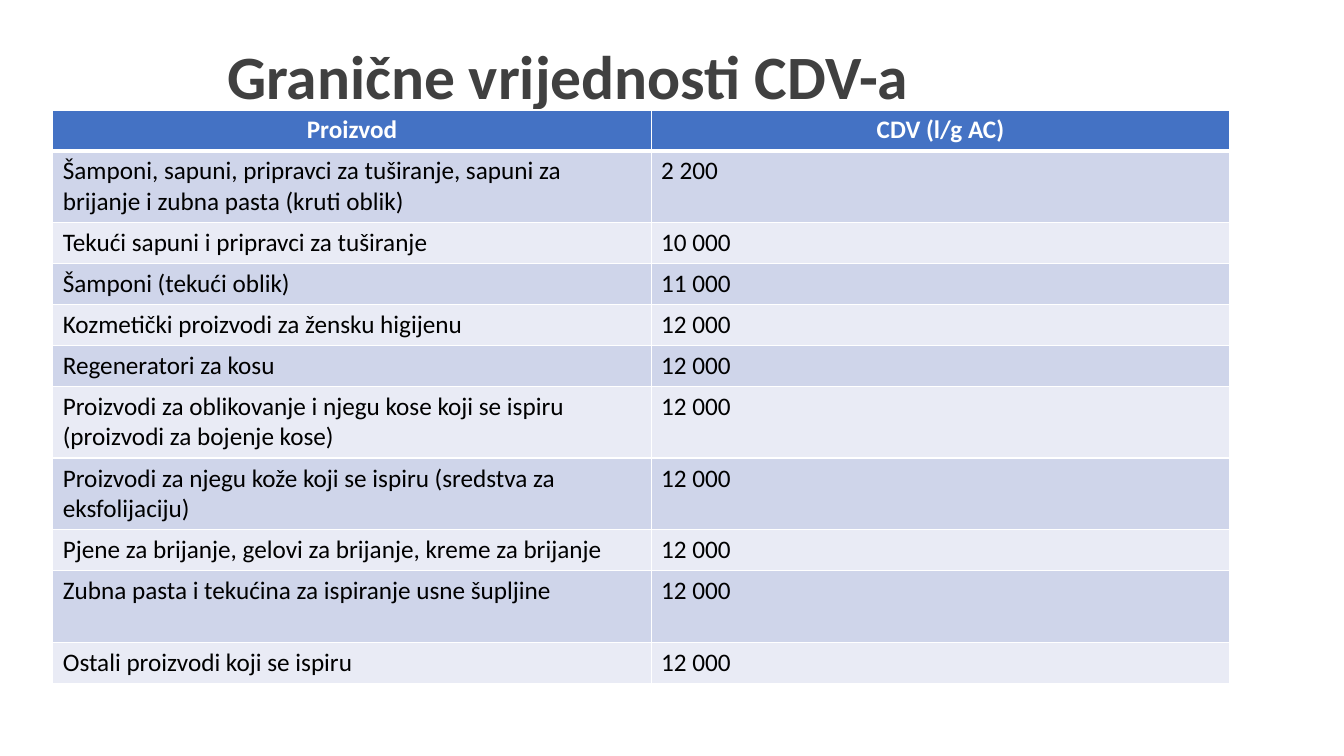
from lxml import etree
from pptx import Presentation
from pptx.dml.color import RGBColor
from pptx.enum.text import MSO_ANCHOR, PP_ALIGN
from pptx.oxml.ns import qn
from pptx.util import Cm, Pt

LEFT, CENTER = PP_ALIGN.LEFT, PP_ALIGN.CENTER
MIDDLE = MSO_ANCHOR.MIDDLE

HEADER = ("Proizvod", "CDV (l/g AC)")
LIMITS = [
    ("Šamponi, sapuni, pripravci za tuširanje, sapuni za brijanje i zubna pasta (kruti oblik)", "2 200"),
    ("Tekući sapuni i pripravci za tuširanje", "10 000"),
    ("Šamponi (tekući oblik)", "11 000"),
    ("Kozmetički proizvodi za žensku higijenu", "12 000"),
    ("Regeneratori za kosu", "12 000"),
    ("Proizvodi za oblikovanje i njegu kose koji se ispiru (proizvodi za bojenje kose)", "12 000"),
    ("Proizvodi za njegu kože koji se ispiru (sredstva za eksfolijaciju)", "12 000"),
    ("Pjene za brijanje, gelovi za brijanje, kreme za brijanje", "12 000"),
    ("Zubna pasta i tekućina za ispiranje usne šupljine", "12 000"),
    ("Ostali proizvodi koji se ispiru", "12 000"),
]
TALL_ROWS = {1, 6, 7, 9}


def rgb(value):
    """Turn a hex string into a colour."""
    return RGBColor.from_string(value)


def write(tf, text, font="Calibri", size=18, color="000000", bold=False, align=LEFT, spacing=1.0):
    """Put formatted text into the first paragraph of a text frame."""
    p = tf.paragraphs[0]
    p.alignment = align
    p.line_spacing = spacing
    r = p.add_run()
    r.text = text
    r.font.name = font
    r.font.size = Pt(size)
    r.font.bold = bold
    r.font.color.rgb = rgb(color)


class Deck:
    """Hold the style and the current slide."""

    heading, header_fill, line = "404040", "4472C4", "FFFFFF"
    bands = ("E9EBF5", "CFD5EA")

    def __init__(self, prs):
        """Start a blank slide."""
        self.s = prs.slides.add_slide(prs.slide_layouts[6])

    def title(self, text, x, y, w, h):
        """Add the slide heading."""
        tf = self.s.shapes.add_textbox(Cm(x), Cm(y), Cm(w), Cm(h)).text_frame
        tf.word_wrap = True
        tf.vertical_anchor = MIDDLE
        write(tf, text, size=44, color=self.heading, bold=True, align=CENTER, spacing=0.9)

    def border(self, cell, bottom):
        """Draw the four edges of a cell."""
        tc_pr = cell._tc.get_or_add_tcPr()
        for side, width in (("L", 1), ("R", 1), ("T", 1), ("B", bottom)):
            ln = etree.SubElement(tc_pr, qn(f"a:ln{side}"), w=str(Pt(width)))
            fill = etree.SubElement(ln, qn("a:solidFill"))
            etree.SubElement(fill, qn("a:srgbClr"), val=self.line)

    def table(self, rows, x, y, widths, heights):
        """Add a banded table with a header row."""
        table = self.s.shapes.add_table(
            len(rows), len(widths), Cm(x), Cm(y), Cm(sum(widths)), Cm(sum(heights))).table
        for column, width in zip(table.columns, widths):
            column.width = Cm(width)
        for i, (values, height) in enumerate(zip(rows, heights)):
            table.rows[i].height = Cm(height)
            head = i == 0
            for j, text in enumerate(values):
                cell = table.cell(i, j)
                self.border(cell, 3 if head else 1)
                cell.fill.solid()
                cell.fill.fore_color.rgb = rgb(self.header_fill if head else self.bands[i % 2])
                write(cell.text_frame, text, bold=head, color="FFFFFF" if head else "000000",
                      align=CENTER if head else LEFT)


def main():
    """Build and save the slide."""
    prs = Presentation()
    prs.slide_width, prs.slide_height = Cm(33.87), Cm(19.05)
    deck = Deck(prs)
    deck.title("Granične vrijednosti CDV-a", 1.07, 0.61, 26.5, 2.77)
    rows = [HEADER] + LIMITS
    heights = [1.81 if i in TALL_ROWS else 1.03 for i in range(len(rows))]
    deck.table(rows, 1.33, 2.77, (15.08, 14.58), heights)
    prs.save("out.pptx")


if __name__ == "__main__":
    main()
